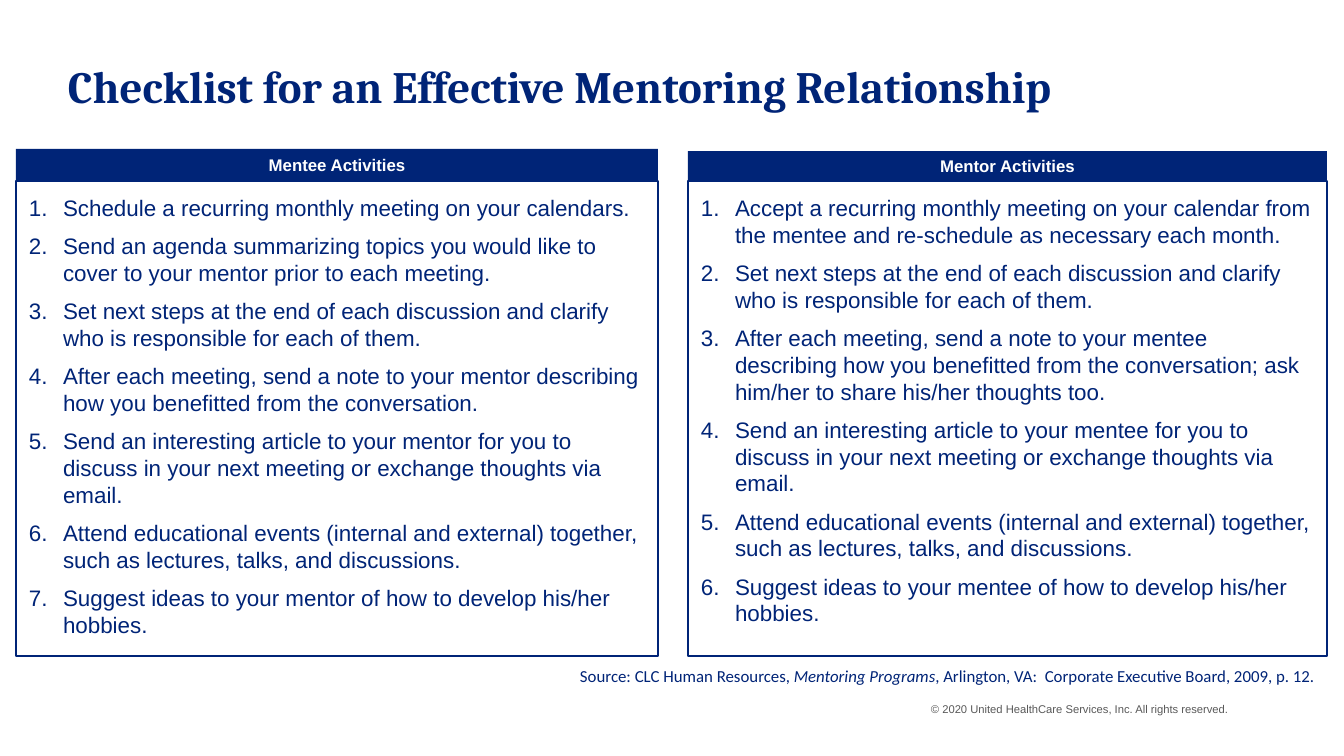
from dataclasses import dataclass

from lxml import etree
from pptx import Presentation
from pptx.dml.color import RGBColor
from pptx.enum.shapes import MSO_SHAPE
from pptx.enum.text import MSO_ANCHOR, MSO_AUTO_SIZE, PP_ALIGN
from pptx.oxml.ns import qn
from pptx.util import Pt

RECTANGLE = MSO_SHAPE.RECTANGLE
TOP, MIDDLE = MSO_ANCHOR.TOP, MSO_ANCHOR.MIDDLE
LEFT, CENTER = PP_ALIGN.LEFT, PP_ALIGN.CENTER
NO_AUTOFIT = MSO_AUTO_SIZE.NONE

EMU_PER_PX = 914400 / 134.4
SLIDE_WIDTH, SLIDE_HEIGHT = 1344, 756
PADDING = 13
NUMBER_INDENT = 34
LIST_TOP, LIST_BOTTOM = 181, 656
COLORS = {"navy": "002477", "white": "FFFFFF", "gray": "595959"}


@dataclass
class Checklist:
    heading: str
    left: int
    width: int
    heading_top: int
    activities: list[str]


NEXT_STEPS = ("Set next steps at the end of each discussion and clarify "
              "who is responsible for each of them.")
EVENTS = ("Attend educational events (internal and external) together, "
          "such as lectures, talks, and discussions.")
ARTICLE = ("Send an interesting article to your {} for you to discuss in your "
           "next meeting or exchange thoughts via email.")
HOBBIES = "Suggest ideas to your {} of how to develop his/her hobbies."

CHECKLISTS = [
    Checklist("Mentee Activities", 16, 642, 149, [
        "Schedule a recurring monthly meeting on your calendars.",
        "Send an agenda summarizing topics you would like to cover to your "
        "mentor prior to each meeting.",
        NEXT_STEPS,
        "After each meeting, send a note to your mentor describing how you "
        "benefitted from the conversation.",
        ARTICLE.format("mentor"),
        EVENTS,
        HOBBIES.format("mentor"),
    ]),
    Checklist("Mentor Activities", 688, 639, 151, [
        "Accept a recurring monthly meeting on your calendar from the mentee "
        "and re-schedule as necessary each month.",
        NEXT_STEPS,
        "After each meeting, send a note to your mentee describing how you "
        "benefitted from the conversation; ask him/her to share his/her "
        "thoughts too.",
        ARTICLE.format("mentee"),
        EVENTS,
        HOBBIES.format("mentee"),
    ]),
]


def px(length: int) -> int:
    return round(length * EMU_PER_PX)


def rgb(name: str) -> RGBColor:
    return RGBColor.from_string(COLORS[name])


def place(shape, left: int, top: int, width: int, height: int) -> None:
    shape.left, shape.top = px(left), px(top)
    shape.width, shape.height = px(width), px(height)


def set_frame(frame, anchor, vertical_padding: int) -> None:
    frame.word_wrap = True
    frame.auto_size = NO_AUTOFIT
    frame.vertical_anchor = anchor
    frame.margin_left = frame.margin_right = px(PADDING)
    frame.margin_top = frame.margin_bottom = px(vertical_padding)


def set_font(font, family: str, size: int, color: str, bold: bool = False) -> None:
    font.name, font.size, font.bold = family, Pt(size), bold
    font.color.rgb = rgb(color)


def number(paragraph) -> None:
    """Give the paragraph an automatic number and a hanging indent."""
    properties = paragraph._p.get_or_add_pPr()
    properties.set("marL", str(px(NUMBER_INDENT)))
    properties.set("indent", str(-px(NUMBER_INDENT)))
    etree.SubElement(properties, qn("a:buFont"), typeface="+mj-lt")
    etree.SubElement(properties, qn("a:buAutoNum"), type="arabicPeriod")


def draw_checklist(slide, body, checklist: Checklist) -> None:
    place(body, checklist.left, LIST_TOP, checklist.width, LIST_BOTTOM - LIST_TOP)
    body.fill.solid()
    body.fill.fore_color.rgb = rgb("white")
    body.line.color.rgb = rgb("navy")
    body.line.width = Pt(0.75)
    set_frame(body.text_frame, TOP, PADDING)
    body.text_frame.text = "\n".join(checklist.activities)
    for activity in body.text_frame.paragraphs:
        number(activity)
        activity.alignment = LEFT
        activity.line_spacing = 1.0
        activity.space_before, activity.space_after = Pt(0), Pt(6)
        for run in activity.runs:
            set_font(run.font, "Arial", 12, "navy")

    heading = slide.shapes.add_shape(RECTANGLE, 0, 0, 0, 0)
    place(heading, checklist.left, checklist.heading_top, checklist.width,
          LIST_TOP - checklist.heading_top)
    heading.shadow.inherit = False
    heading.fill.solid()
    heading.fill.fore_color.rgb = rgb("navy")
    heading.line.fill.background()
    set_frame(heading.text_frame, MIDDLE, 0)
    label = heading.text_frame.paragraphs[0]
    label.text = checklist.heading
    label.alignment = CENTER
    set_font(label.runs[0].font, "Arial", 9, "white", bold=True)


def add_note(slide, left: int, top: int, width: int, height: int):
    """Add an empty one-line text box and return its paragraph."""
    note = slide.shapes.add_textbox(0, 0, 0, 0)
    place(note, left, top, width, height)
    set_frame(note.text_frame, MIDDLE, 0)
    return note.text_frame.paragraphs[0]


def main() -> None:
    presentation = Presentation()
    presentation.slide_width = px(SLIDE_WIDTH)
    presentation.slide_height = px(SLIDE_HEIGHT)
    slide = presentation.slides.add_slide(
        presentation.slide_layouts.get_by_name("Two Content"))

    title = slide.shapes.title
    place(title, 55, 51, 1237, 81)
    set_frame(title.text_frame, MIDDLE, 0)
    title.text_frame.margin_bottom = px(12)
    title.text_frame.text = "Checklist for an Effective Mentoring Relationship"
    title_line = title.text_frame.paragraphs[0]
    title_line.alignment = LEFT
    set_font(title_line.runs[0].font, "Cambria", 24, "navy", bold=True)

    bodies = list(slide.placeholders)[1:]
    for body, checklist in zip(bodies, CHECKLISTS):
        draw_checklist(slide, body, checklist)

    source = add_note(slide, 567, 666, 777, 20)
    for words, italic in [
        ("Source: CLC Human Resources, ", False),
        ("Mentoring Programs", True),
        (", Arlington, VA:  Corporate Executive Board, 2009, p. 12.", False),
    ]:
        run = source.add_run()
        run.text = words
        set_font(run.font, "Calibri", 9, "navy")
        run.font.italic = italic

    rights = add_note(slide, 918, 696, 347, 27)
    rights.text = "© 2020 United HealthCare Services, Inc. All rights reserved."
    set_font(rights.runs[0].font, "Arial", 6, "gray")

    presentation.save("out.pptx")


if __name__ == "__main__":
    main()
